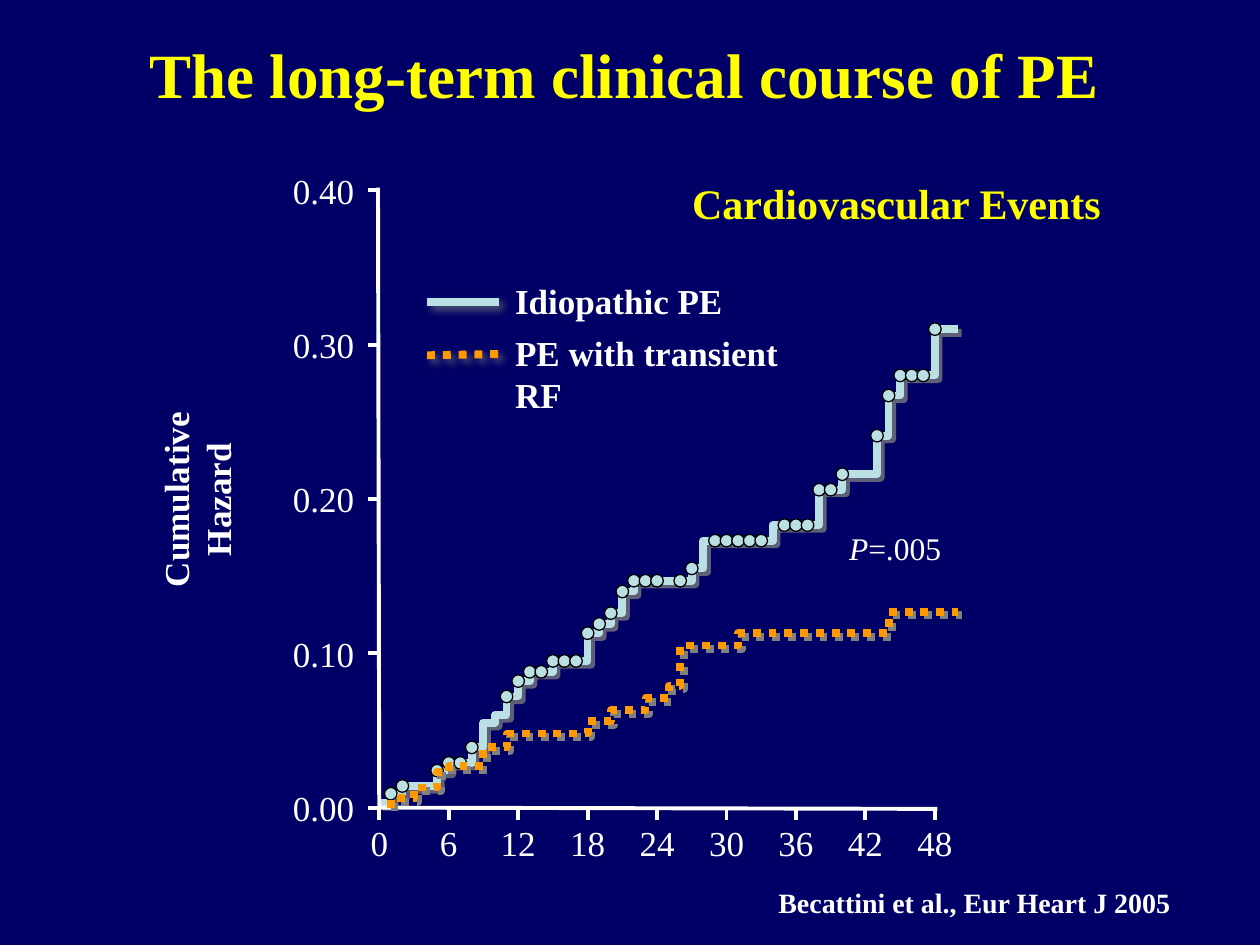
from lxml import etree
from pptx import Presentation
from pptx.dml.color import RGBColor
from pptx.enum.dml import MSO_LINE
from pptx.enum.shapes import MSO_CONNECTOR, MSO_SHAPE
from pptx.enum.text import MSO_ANCHOR, PP_ALIGN
from pptx.oxml.ns import qn
from pptx.util import Inches, Pt

STRAIGHT = MSO_CONNECTOR.STRAIGHT
OVAL = MSO_SHAPE.OVAL
DOTTED = MSO_LINE.ROUND_DOT
LEFT, CENTER, RIGHT = PP_ALIGN.LEFT, PP_ALIGN.CENTER, PP_ALIGN.RIGHT
TOP, MIDDLE, BOTTOM = MSO_ANCHOR.TOP, MSO_ANCHOR.MIDDLE, MSO_ANCHOR.BOTTOM

FONT = "Times New Roman"
NAVY, WHITE, YELLOW = "000066", "FFFFFF", "FFFF00"
PALE_BLUE, ORANGE, GRAY, BLACK = "BBE0E3", "FF9900", "808080", "000000"

CELL = Inches(0.1)
PLOT_LEFT, PLOT_TOP, PLOT_WIDTH, PLOT_HEIGHT = 30.1, 15.1, 44.1, 49
PLOT_BOTTOM = PLOT_TOP + PLOT_HEIGHT
LAST_MONTH, TOP_PERCENT, END_MONTH = 48, 40, 50
MARKER = 1

IDIOPATHIC = [
    (0, 0.3), (1, 0.9), (2, 1.4), (5, 2.4), (6, 2.9), (8, 3.9), (9, 5.5),
    (10, 6), (11, 7.2), (12, 8.2), (13, 8.8), (15, 9.5), (18, 11.3),
    (19, 11.9), (20, 12.6), (21, 14), (22, 14.7), (27, 15.5), (28, 17.3),
    (34, 18.3), (38, 20.6), (40, 21.6), (43, 24.1), (44, 26.7), (45, 28),
    (48, 31),
]
TRANSIENT = [
    (1, 0), (1, 0.6), (3, 1.3), (5, 2.3), (6, 2.7), (9, 3.9), (11, 4.8),
    (18, 5.6), (20, 6.3), (23, 7.1), (25, 7.9), (26, 10.5), (31, 11.3),
    (44, 12.7),
]
UNMARKED_MONTHS = {3, 4, 9, 10, 25, 28, 34, 41, 42}


def cells(count):
    return round(count * CELL)


def color(hex_string):
    return RGBColor.from_string(hex_string)


def month_column(month):
    return PLOT_LEFT + PLOT_WIDTH * month / LAST_MONTH


def hazard_row(percent):
    return PLOT_BOTTOM - PLOT_HEIGHT * percent / TOP_PERCENT


def format_line(line, hex_string, width, dash=None):
    line.color.rgb = color(hex_string)
    line.width = Pt(width)
    if dash is not None:
        line.dash_style = dash


def set_effects(shape, shadow_blur=None, opacity=75):
    effects = etree.SubElement(shape._element.spPr, qn("a:effectLst"))
    if shadow_blur is None:
        return
    shadow = etree.SubElement(
        effects, qn("a:outerShdw"), blurRad=str(Pt(shadow_blur)),
        dist=str(Pt(3)), dir="2700000", algn="ctr", rotWithShape="0")
    shade = etree.SubElement(shadow, qn("a:srgbClr"), val=GRAY)
    etree.SubElement(shade, qn("a:alpha"), val=str(opacity * 1000))


def format_paragraph(paragraph, size, hex_string, bold, align):
    paragraph.alignment = align
    font = paragraph.font
    font.name, font.size, font.bold = FONT, Pt(size), bold
    font.color.rgb = color(hex_string)


def add_text(slide, lines, left, top, width, height, size=20,
             hex_string=WHITE, bold=False, align=LEFT, anchor=TOP, wrap=False):
    box = slide.shapes.add_textbox(*map(cells, (left, top, width, height)))
    frame = box.text_frame
    frame.word_wrap = wrap
    frame.vertical_anchor = anchor
    frame.text = "\n".join(lines)
    for paragraph in frame.paragraphs:
        format_paragraph(paragraph, size, hex_string, bold, align)
    return box


def add_line(shapes, start, end, hex_string=WHITE, width=2.25, dash=None,
             shadow_blur=None):
    line = shapes.add_connector(STRAIGHT, *map(cells, (*start, *end)))
    format_line(line.line, hex_string, width, dash)
    set_effects(line, shadow_blur)


def add_step_curve(slide, steps, hex_string, dash=None, opacity=75):
    levels = [hazard_row(percent) for month, percent in steps]
    columns = [month_column(month) for month, percent in steps]
    corners = []
    for column, level, next_column in zip(
            columns, levels, columns[1:] + [month_column(END_MONTH)]):
        corners += [(column, level), (next_column, level)]
    points = [(cells(column), cells(row)) for column, row in corners]
    builder = slide.shapes.build_freeform(*points[0])
    builder.add_line_segments(points[1:], close=False)
    curve = builder.convert_to_shape()
    curve.fill.background()
    format_line(curve.line, hex_string, 4.5, dash)
    set_effects(curve, 0, opacity)


def add_markers(slide, steps):
    group = slide.shapes.add_group_shape()
    for month in range(1, LAST_MONTH + 1):
        if month in UNMARKED_MONTHS:
            continue
        percent = max(level for start, level in steps if start <= month)
        marker = group.shapes.add_shape(
            OVAL, cells(month_column(month) - MARKER / 2),
            cells(hazard_row(percent) - MARKER / 2), cells(MARKER), cells(MARKER))
        marker.fill.solid()
        marker.fill.fore_color.rgb = color(PALE_BLUE)
        format_line(marker.line, BLACK, 0.75)
        marker.shadow.inherit = False


def add_axes(slide):
    axes = slide.shapes.add_group_shape().shapes
    add_line(axes, (30, PLOT_TOP - 0.2), (PLOT_LEFT, PLOT_BOTTOM + 0.2))
    add_line(axes, (30, PLOT_BOTTOM), (74.4, PLOT_BOTTOM + 0.1))
    for percent in range(0, TOP_PERCENT + 1, 10):
        row = hazard_row(percent)
        add_line(axes, (30, row), (29.2, row))
        add_text(slide, [f"{percent / 100:.2f}"], 22.2, row - 2.15, 6.9, 4.3,
                 align=RIGHT, anchor=MIDDLE)
    for month in range(0, LAST_MONTH + 1, 6):
        column = month_column(month)
        add_line(axes, (column, PLOT_BOTTOM + 0.1), (column, PLOT_BOTTOM + 1))
        add_text(slide, [str(month)], column - 2.4, 64.7, 4.8, 4.3, align=CENTER)


def add_legend(slide):
    add_line(slide.shapes, (33.9, 24), (39.6, 24), PALE_BLUE, 4.5, shadow_blur=5)
    add_line(slide.shapes, (33.9, 28.2), (39.6, 28.1), ORANGE, 4.5, DOTTED, 5)
    box = add_text(slide, ["Idiopathic PE", "PE with transient RF"],
                   39.9, 21.7, 25, 8.5, bold=True, wrap=True)
    box.text_frame.paragraphs[1].space_before = Pt(5.5)


def add_title(slide, text):
    title = slide.shapes.title
    title.left, title.top, title.width, title.height = map(
        cells, (3.5, 2.1, 92.1, 7.5))
    title.text_frame.text = text
    title.text_frame.vertical_anchor = MIDDLE
    format_paragraph(title.text_frame.paragraphs[0], 36, YELLOW, True, CENTER)


def add_p_value(slide):
    box = add_text(slide, [""], 66.4, 41.5, 9.3, 4, size=18)
    paragraph = box.text_frame.paragraphs[0]
    for text, italic in (("P", True), ("=.005", False)):
        run = paragraph.add_run()
        run.text = text
        run.font.italic = italic


def main():
    presentation = Presentation()
    presentation.slide_width, presentation.slide_height = Inches(10), Inches(7.5)
    slide = presentation.slides.add_slide(presentation.slide_layouts[5])
    slide.background.fill.solid()
    slide.background.fill.fore_color.rgb = color(NAVY)

    add_title(slide, "The long-term clinical course of PE")
    add_step_curve(slide, IDIOPATHIC, PALE_BLUE)
    add_text(slide, ["Becattini et al., Eur Heart J 2005"], 60.8, 69.7, 43.6, 3.7,
             size=16, bold=True, anchor=BOTTOM)
    add_legend(slide)
    add_text(slide, ["Cardiovascular Events"], 53.9, 13.6, 34.5, 5, size=24,
             hex_string=YELLOW, bold=True, align=CENTER)
    hazard_label = add_text(slide, ["Cumulative Hazard"], 6.25, 37.5, 22, 4.3,
                            bold=True, align=CENTER, anchor=BOTTOM, wrap=True)
    hazard_label.rotation = 270
    add_p_value(slide)
    add_axes(slide)
    add_markers(slide, IDIOPATHIC)
    add_step_curve(slide, TRANSIENT, ORANGE, DOTTED, 100)
    presentation.save("out.pptx")


if __name__ == "__main__":
    main()
